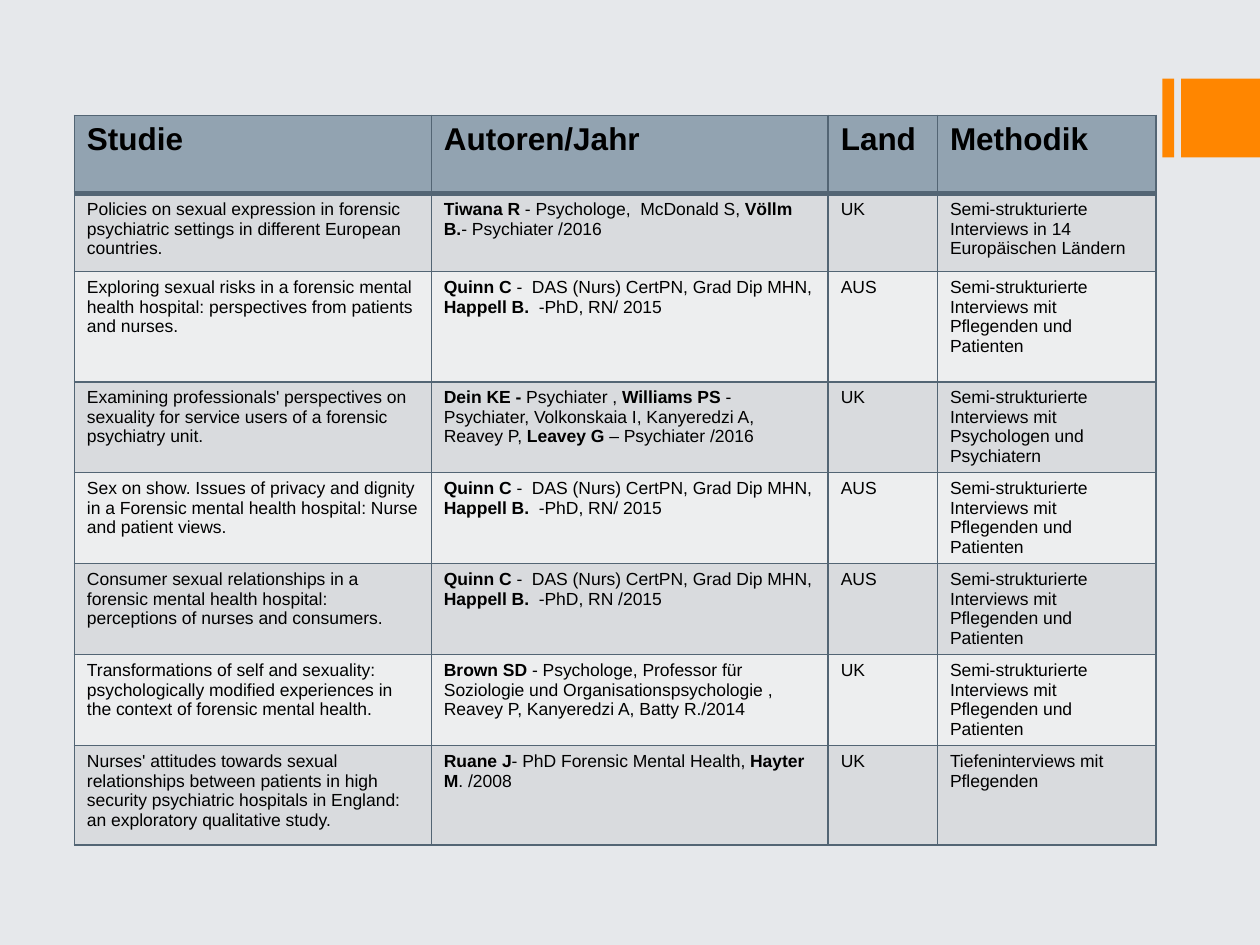
from lxml.etree import SubElement
from pptx import Presentation
from pptx.dml.color import RGBColor
from pptx.enum.shapes import MSO_SHAPE
from pptx.oxml.ns import qn
from pptx.util import Pt

COLORS = {
    "background": "E6E8EB",
    "accent": "FF8600",
    "header": "92A3B1",
    "odd": "D9DBDE",
    "even": "EDEEEF",
    "border": "536574",
    "text": "000000",
}

HEADINGS = ["Studie", "Autoren/Jahr", "Land", "Methodik"]
NURSES_AND_PATIENTS = "Semi-strukturierte Interviews mit Pflegenden und Patienten"
QUINN_HAPPELL = "**Quinn C** -  DAS (Nurs) CertPN, Grad Dip MHN, **Happell B.**  -PhD, "

STUDIES = [
    ("Policies on sexual expression in forensic psychiatric settings in different European countries.",
     "**Tiwana R** - Psychologe,  McDonald S, **Völlm B.**- Psychiater /2016",
     "UK", "Semi-strukturierte Interviews in 14 Europäischen Ländern"),
    ("Exploring sexual risks in a forensic mental health hospital: perspectives from patients and nurses.",
     QUINN_HAPPELL + "RN/ 2015", "AUS", NURSES_AND_PATIENTS),
    ("Examining professionals' perspectives on sexuality for service users of a forensic psychiatry unit.",
     "**Dein KE - **Psychiater , **Williams PS **- Psychiater, Volkonskaia I, "
     "Kanyeredzi A, Reavey P, **Leavey G** – Psychiater /2016",
     "UK", "Semi-strukturierte Interviews mit Psychologen und Psychiatern"),
    ("Sex on show. Issues of privacy and dignity in a Forensic mental health hospital: "
     "Nurse and patient views.",
     QUINN_HAPPELL + "RN/ 2015", "AUS", NURSES_AND_PATIENTS),
    ("Consumer sexual relationships in a forensic mental health hospital: "
     "perceptions of nurses and consumers.",
     QUINN_HAPPELL + "RN /2015", "AUS", NURSES_AND_PATIENTS),
    ("Transformations of self and sexuality: psychologically modified experiences "
     "in the context of forensic mental health.",
     "**Brown SD **- Psychologe, Professor für Soziologie und Organisationspsychologie , "
     "Reavey P, Kanyeredzi A, Batty R./2014",
     "UK", NURSES_AND_PATIENTS),
    ("Nurses' attitudes towards sexual relationships between patients in high security "
     "psychiatric hospitals in England: an exploratory qualitative study.",
     "**Ruane J**- PhD Forensic Mental Health, **Hayter M**. /2008",
     "UK", "Tiefeninterviews mit Pflegenden"),
]

COLUMN_WIDTHS = [204, 226.8, 62.4, 124.8]
ROW_HEIGHTS = [44.6, 44.6, 63, 52, 52, 52, 52, 56.7]
TABLE_LEFT, TABLE_TOP = 42.5, 66
BAR_TOP, BAR_HEIGHT = 45, 45
BARS = [(664.2, 6.8), (675, 45)]
HEADING_FORMAT = {"name": "Arial", "size": Pt(18)}
BODY_FORMAT = {"name": "Arial", "size": Pt(10)}


def paint(fill, color):
    fill.solid()
    fill.fore_color.rgb = RGBColor.from_string(COLORS[color])


def add_border(cell, side, width):
    line = SubElement(cell._tc.get_or_add_tcPr(), qn(f"a:ln{side}"), w=str(Pt(width)))
    SubElement(SubElement(line, qn("a:solidFill")), qn("a:srgbClr"), val=COLORS["border"])


def write(cell, marked_text, text_format, all_bold):
    paragraph = cell.text_frame.paragraphs[0]
    for index, part in enumerate(marked_text.split("**")):
        if not part:
            continue
        run = paragraph.add_run()
        run.text = part
        for attribute, value in text_format.items():
            setattr(run.font, attribute, value)
        run.font.bold = all_bold or index % 2 == 1
        run.font.color.rgb = RGBColor.from_string(COLORS["text"])


def add_bars(slide):
    for left, width in BARS:
        bar = slide.shapes.add_shape(
            MSO_SHAPE.RECTANGLE, Pt(left), Pt(BAR_TOP), Pt(width), Pt(BAR_HEIGHT))
        bar.shadow.inherit = False
        paint(bar.fill, "accent")
        bar.line.fill.background()


def add_studies(slide):
    rows = [HEADINGS, *STUDIES]
    table = slide.shapes.add_table(
        len(rows), len(HEADINGS), Pt(TABLE_LEFT), Pt(TABLE_TOP),
        Pt(sum(COLUMN_WIDTHS)), Pt(sum(ROW_HEIGHTS))).table
    for column, width in zip(table.columns, COLUMN_WIDTHS):
        column.width = Pt(width)
    for number, (row, height) in enumerate(zip(rows, ROW_HEIGHTS)):
        table.rows[number].height = Pt(height)
        is_header = number == 0
        color = "header" if is_header else "odd" if number % 2 else "even"
        for position, text in enumerate(row):
            cell = table.cell(number, position)
            write(cell, text, HEADING_FORMAT if is_header else BODY_FORMAT, is_header)
            for side in "LRTB":
                below_header = (number, side) in ((0, "B"), (1, "T"))
                add_border(cell, side, 3 if below_header else 1)
            paint(cell.fill, color)


def main():
    presentation = Presentation()
    presentation.slide_width, presentation.slide_height = Pt(720), Pt(540)
    slide = presentation.slides.add_slide(presentation.slide_layouts[6])
    paint(slide.background.fill, "background")
    add_bars(slide)
    add_studies(slide)
    presentation.save("out.pptx")


if __name__ == "__main__":
    main()
